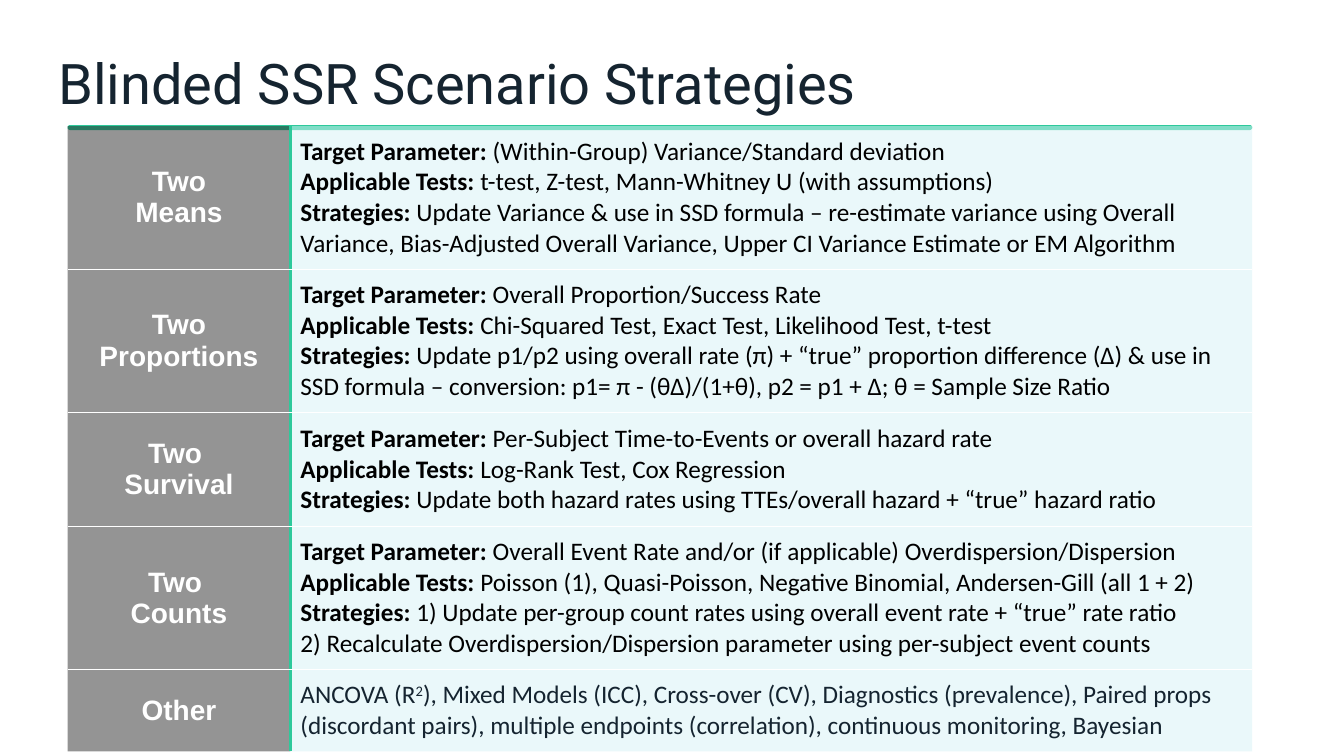
"""Build the slide on blinded sample size re-estimation strategies."""
from lxml import etree
from pptx import Presentation
from pptx.dml.color import RGBColor
from pptx.enum.shapes import MSO_SHAPE
from pptx.enum.text import MSO_ANCHOR, PP_ALIGN
from pptx.oxml.ns import qn
from pptx.util import Inches, Pt

ROUND_RECT = MSO_SHAPE.ROUNDED_RECTANGLE
MIDDLE, BOTTOM = MSO_ANCHOR.MIDDLE, MSO_ANCHOR.BOTTOM
LEFT, CENTER = PP_ALIGN.LEFT, PP_ALIGN.CENTER

NAVY = RGBColor(0x15, 0x24, 0x30)
GREEN = RGBColor(0x2E, 0xC9, 0x9B)
CHARCOAL = RGBColor(0x26, 0x26, 0x26)
PALE_BLUE = RGBColor(0xD6, 0xF2, 0xF6)
BLACK = RGBColor(0, 0, 0)
WHITE = RGBColor(0xFF, 0xFF, 0xFF)

TITLE = "Blinded SSR Scenario Strategies"
TARGET, TESTS, STRATEGIES = "Target Parameter: ", "Applicable Tests: ", "Strategies: "
SCENARIOS = [
    (["Two", "Means"], 1.36, [
        (TARGET, "(Within-Group) Variance/Standard deviation"),
        (TESTS, "t-test, Z-test, Mann-Whitney U (with assumptions)"),
        (STRATEGIES, "Update Variance & use in SSD formula – re-estimate variance using Overall "
                     "Variance, Bias-Adjusted Overall Variance, Upper CI Variance Estimate "
                     "or EM Algorithm"),
    ]),
    (["Two", "Proportions"], 1.36, [
        (TARGET, "Overall Proportion/Success Rate"),
        (TESTS, "Chi-Squared Test, Exact Test, Likelihood Test, t-test"),
        (STRATEGIES, "Update p1/p2 using overall rate (π) + “true” proportion difference (Δ) "
                     "& use in SSD formula – conversion: p1= π - (θΔ)/(1+θ), p2 = p1 + Δ; "
                     "θ = Sample Size Ratio"),
    ]),
    (["Two ", "Survival"], 1.13, [
        (TARGET, "Per-Subject Time-to-Events or overall hazard rate"),
        (TESTS, "Log-Rank Test, Cox Regression"),
        (STRATEGIES, "Update both hazard rates using TTEs/overall hazard + “true” hazard ratio"),
    ]),
    (["Two ", "Counts"], 1.36, [
        (TARGET, "Overall Event Rate and/or (if applicable) Overdispersion/Dispersion"),
        (TESTS, "Poisson (1), Quasi-Poisson, Negative Binomial, Andersen-Gill (all 1 + 2)"),
        (STRATEGIES, "1) Update per-group count rates using overall event rate + “true” rate ratio"),
        ("", "2) Recalculate Overdispersion/Dispersion parameter using per-subject event counts"),
    ]),
]
OTHER_LABEL, OTHER_HEIGHT = ["Other"], 0.81
OTHER_RUNS = [
    ("ANCOVA (R", False),
    ("2", True),
    ("), Mixed Models (ICC), Cross-over (CV), Diagnostics (prevalence), Paired props "
     "(discordant pairs), multiple endpoints (correlation), continuous monitoring, Bayesian", False),
]
COLUMN_WIDTHS = [2.21, 9.54]
TABLE_LEFT, TABLE_TOP = 0.67, 1.25


def add_run(paragraph, text, font, size, color, bold=False):
    """Append one formatted run and return it."""
    run = paragraph.add_run()
    run.text = text
    run.font.name, run.font.size, run.font.bold = font, Pt(size), bold
    run.font.color.rgb = color
    return run


def add_paragraphs(frame, count, align):
    """Return the given number of aligned paragraphs of an empty frame."""
    paragraphs = [frame.paragraphs[0]] + [frame.add_paragraph() for _ in range(count - 1)]
    for paragraph in paragraphs:
        paragraph.alignment = align
    return paragraphs


def format_cell(cell, color, borders):
    """Set margins, a translucent fill and the four borders of a cell."""
    cell.margin_left = cell.margin_right = cell.margin_top = cell.margin_bottom = Inches(0.1)
    cell.vertical_anchor = MIDDLE
    cell.fill.solid()
    cell.fill.fore_color.rgb = color
    properties = cell._tc.get_or_add_tcPr()
    srgb = properties.find(".//" + qn("a:srgbClr"))
    etree.SubElement(srgb, qn("a:alpha"), val="49000")
    for position, side in enumerate("LRTB"):
        line = etree.Element(qn("a:ln" + side))
        if side in borders:
            line_color, width = borders[side]
            line.set("w", str(Pt(width)))
            solid = etree.SubElement(line, qn("a:solidFill"))
            etree.SubElement(solid, qn("a:srgbClr"), val=str(line_color))
        else:
            line.set("w", "0")
            etree.SubElement(line, qn("a:noFill"))
        properties.insert(position, line)


def add_title(slide):
    """Place and format the slide title."""
    title = slide.shapes.title
    title.left, title.top = Inches(0.58), Inches(0.38)
    title.width, title.height = Inches(12.16), Inches(0.78)
    frame = title.text_frame
    frame.margin_left = frame.margin_right = frame.margin_top = frame.margin_bottom = 0
    frame.vertical_anchor = BOTTOM
    heading = frame.paragraphs[0]
    heading.alignment, heading.line_spacing = LEFT, 0.9
    add_run(heading, TITLE, "Roboto", 40, NAVY)


def add_rule(slide):
    """Draw the green rule under the title."""
    rule = slide.shapes.add_shape(ROUND_RECT, Inches(TABLE_LEFT), Inches(1.24),
                                  Inches(sum(COLUMN_WIDTHS)), Inches(0.05))
    rule.adjustments[0] = 0.5
    rule.shadow.inherit = False
    rule.fill.solid()
    rule.fill.fore_color.rgb = GREEN
    rule.line.fill.background()


def add_scenarios(slide):
    """Add the table of scenarios and their strategies."""
    labels = [scenario[0] for scenario in SCENARIOS] + [OTHER_LABEL]
    heights = [scenario[1] for scenario in SCENARIOS] + [OTHER_HEIGHT]
    table = slide.shapes.add_table(
        len(labels), len(COLUMN_WIDTHS), Inches(TABLE_LEFT), Inches(TABLE_TOP),
        Inches(sum(COLUMN_WIDTHS)), Inches(sum(heights))).table
    table.first_row = table.horz_banding = False
    for column, width in zip(table.columns, COLUMN_WIDTHS):
        column.width = Inches(width)

    for index, (label, height) in enumerate(zip(labels, heights)):
        table.rows[index].height = Inches(height)
        label_cell, details_cell = table.cell(index, 0), table.cell(index, 1)
        dividers = {}
        if index > 0:
            dividers["T"] = (WHITE, 1)
        if index < len(labels) - 1:
            dividers["B"] = (WHITE, 1)
        format_cell(label_cell, CHARCOAL, {**dividers, "R": (GREEN, 3)})
        format_cell(details_cell, PALE_BLUE, {**dividers, "L": (GREEN, 3)})
        for paragraph, word in zip(add_paragraphs(label_cell.text_frame, len(label), CENTER), label):
            add_run(paragraph, word, "Arial", 20, WHITE, True)

    for index, (_, _, details) in enumerate(SCENARIOS):
        frame = table.cell(index, 1).text_frame
        for paragraph, (lead, text) in zip(add_paragraphs(frame, len(details), LEFT), details):
            if lead:
                add_run(paragraph, lead, "Calibri", 18, BLACK, True)
            add_run(paragraph, text, "Calibri", 18, BLACK)

    other = table.cell(len(SCENARIOS), 1).text_frame.paragraphs[0]
    for text, raised in OTHER_RUNS:
        run = add_run(other, text, "Calibri", 18, NAVY)
        if raised:
            run._r.get_or_add_rPr().set("baseline", "30000")


def main():
    """Create and save the presentation."""
    deck = Presentation()
    deck.slide_width, deck.slide_height = Inches(13.33), Inches(7.5)
    slide = deck.slides.add_slide(deck.slide_layouts[5])
    add_title(slide)
    add_rule(slide)
    add_scenarios(slide)
    deck.save("out.pptx")


if __name__ == "__main__":
    main()
